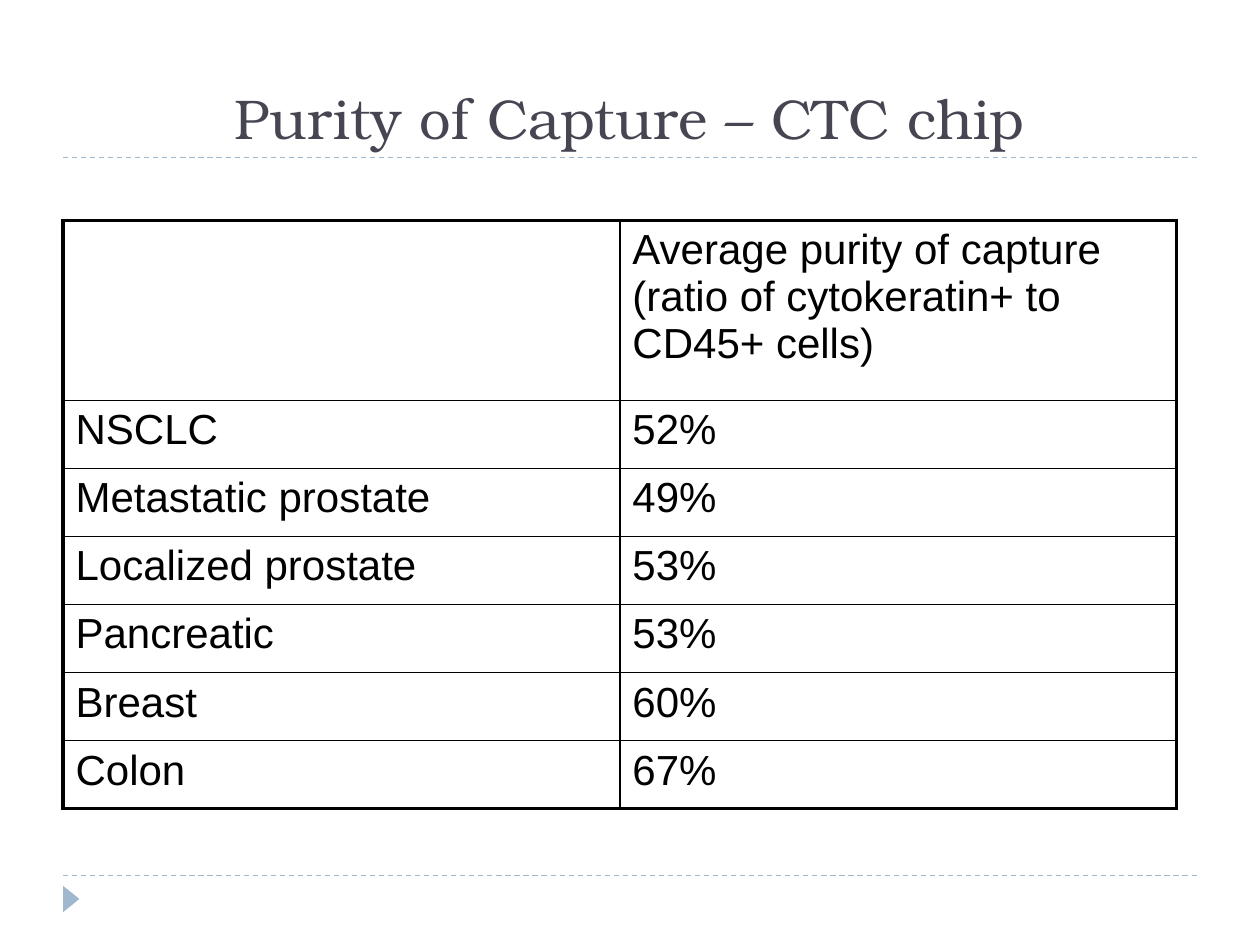
"""Build the slide on capture purity of the CTC chip."""
from lxml import etree
from pptx import Presentation
from pptx import util as u
from pptx.dml.color import RGBColor
from pptx.enum import dml, shapes, text
from pptx.oxml.ns import qn

PX = 9144
BLACK = RGBColor(0x00, 0x00, 0x00)
SLATE = RGBColor(0x46, 0x46, 0x53)
BLUE = RGBColor(0x9F, 0xB8, 0xCD)
THICK, THIN = 2.25, 1
ROWS = [
    ("", "Average purity of capture (ratio of cytokeratin+ to CD45+ cells)"),
    ("NSCLC", "52%"),
    ("Metastatic prostate", "49%"),
    ("Localized prostate", "53%"),
    ("Pancreatic", "53%"),
    ("Breast", "60%"),
    ("Colon", "67%"),
]


def px(*values):
    return [u.Emu(v * PX) for v in values]


def add_border(cell, side, width):
    tcPr = cell._tc.get_or_add_tcPr()
    ln = etree.SubElement(tcPr, qn(f"a:ln{side}"), w=str(u.Pt(width)))
    fill = etree.SubElement(ln, qn("a:solidFill"))
    etree.SubElement(fill, qn("a:srgbClr"), val=str(BLACK))


prs = Presentation()
prs.slide_width, prs.slide_height = px(1000, 750)
s = prs.slides.add_slide(prs.slide_layouts[5])

for y in (695, 125):
    rule = s.shapes.add_connector(shapes.MSO_CONNECTOR.STRAIGHT, *px(50, y, 950, y))
    rule.line.color.rgb = BLUE
    rule.line.width = u.Pt(0.75)
    rule.line.dash_style = dml.MSO_LINE.DASH
    etree.SubElement(rule._element.spPr, qn("a:effectLst"))

marker = s.shapes.add_shape(shapes.MSO_SHAPE.ISOSCELES_TRIANGLE, *px(46, 707, 21, 13))
marker.rotation = 90
marker.shadow.inherit = False
marker.fill.solid()
marker.fill.fore_color.rgb = BLUE
marker.line.fill.background()

title = s.shapes.title
title.left, title.top, title.width, title.height = px(50, 30, 900, 95)
tf = title.text_frame
tf.text = "Purity of Capture – CTC chip"
tf.vertical_anchor = text.MSO_ANCHOR.BOTTOM
p = tf.paragraphs[0]
p.alignment = text.PP_ALIGN.CENTER
p.font.name = "TeX Gyre Bonum"
p.font.size = u.Pt(32)
p.font.color.rgb = SLATE

last = len(ROWS) - 1
table = s.shapes.add_table(len(ROWS), 2, *px(50, 175, 884, 467)).table
table.first_row = False
table.horz_banding = False
for column in table.columns:
    column.width = u.Emu(442 * PX)
for i, values in enumerate(ROWS):
    table.rows[i].height = u.Emu((54 if i else 143) * PX)
    for j, value in enumerate(values):
        cell = table.cell(i, j)
        add_border(cell, "L", THICK if j == 0 else THIN)
        add_border(cell, "R", THICK if j == 1 else THIN)
        add_border(cell, "T", THICK if i == 0 else THIN)
        add_border(cell, "B", THICK if i == last else THIN)
        cell.fill.background()
        cell.text = value
        p = cell.text_frame.paragraphs[0]
        p.font.name = "Arial"
        p.font.size = u.Pt(24)
        p.font.color.rgb = BLACK

prs.save("out.pptx")
